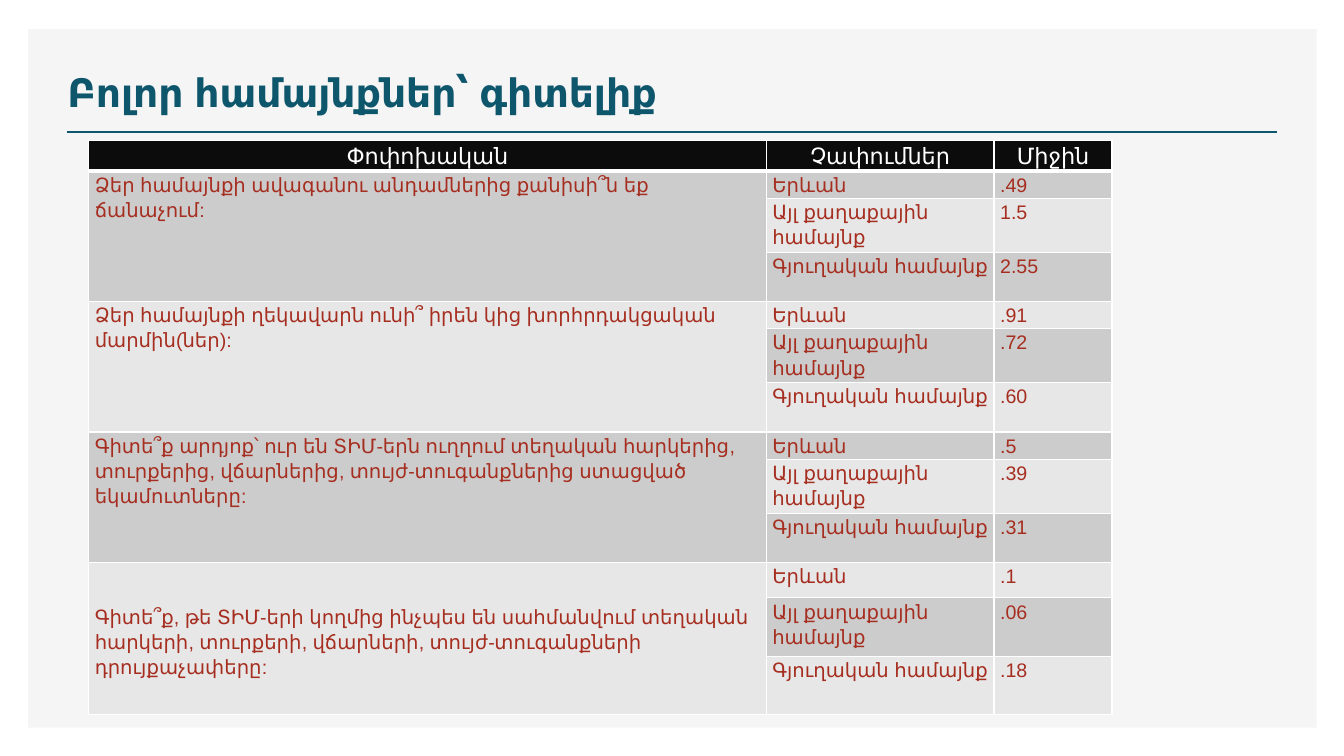
from dataclasses import dataclass

from lxml.etree import SubElement
from pptx import Presentation
from pptx.dml.color import RGBColor
from pptx.enum.shapes import MSO_CONNECTOR, MSO_SHAPE
from pptx.enum.text import MSO_ANCHOR, PP_ALIGN
from pptx.oxml.ns import qn
from pptx.slide import Slide
from pptx.table import Table, _Cell
from pptx.text.text import TextFrame
from pptx.util import Inches, Pt

WHITE = RGBColor(0xFF, 0xFF, 0xFF)
PANEL_GRAY = RGBColor(0xF5, 0xF5, 0xF5)
TEAL = RGBColor(0x0E, 0x56, 0x6C)
BLACK = RGBColor(0x0C, 0x0C, 0x0C)
RED = RGBColor(0xA6, 0x2E, 0x20)
BANDS = (RGBColor(0xCC, 0xCC, 0xCC), RGBColor(0xE7, 0xE7, 0xE7))

HEADERS = ("Փոփոխական", "Չափումներ", "Միջին")
COMMUNITIES = ("Երևան", "Այլ քաղաքային համայնք", "Գյուղական համայնք")
COLUMN_WIDTHS = (6.72, 2.26, 1.17)
HEADER_HEIGHT = 0.26


@dataclass
class Question:
    text: str
    means: tuple[str, str, str]
    row_heights: tuple[float, float, float] = (0.26, 0.49, 0.49)
    top_margin: float = 0


QUESTIONS = (
    Question("Ձեր համայնքի ավագանու անդամներից քանիսի՞ն եք ճանաչում:",
             (".49", "1.5", "2.55")),
    Question("Ձեր համայնքի ղեկավարն ունի՞ իրեն կից խորհրդակցական մարմին(ներ):",
             (".91", ".72", ".60")),
    Question("Գիտե՞ք արդյոք՝ ուր են ՏԻՄ-երն ուղղում տեղական հարկերից, "
             "տուրքերից, վճարներից, տույժ-տուգանքներից ստացված եկամուտները:",
             (".5", ".39", ".31")),
    Question("Գիտե՞ք, թե ՏԻՄ-երի կողմից ինչպես են սահմանվում տեղական հարկերի, "
             "տուրքերի, վճարների, տույժ-տուգանքների դրույքաչափերը:",
             (".1", ".06", ".18"), (0.35, 0.58, 0.58), 0.4),
)


def write_text(frame: TextFrame, text: str, *, size: float, color: RGBColor,
               bold: bool = False, align: PP_ALIGN = PP_ALIGN.LEFT,
               line_spacing: float = 1, space_after: float = 0) -> None:
    paragraph = frame.paragraphs[0]
    paragraph.alignment = align
    paragraph.line_spacing = line_spacing
    paragraph.space_after = Pt(space_after)
    run = paragraph.add_run()
    run.text = text
    run.font.name = "Arial"
    run.font.size = Pt(size)
    run.font.bold = bold
    run.font.color.rgb = color


def style_cell(cell: _Cell, fill: RGBColor, bottom_width: float = 1) -> None:
    cell.margin_left = cell.margin_right = Inches(0.06)
    cell.margin_top = cell.margin_bottom = 0
    cell.vertical_anchor = MSO_ANCHOR.TOP
    properties = cell._tc.get_or_add_tcPr()
    for side, width in (("L", 1), ("R", 1), ("T", 1), ("B", bottom_width)):
        border = SubElement(properties, qn(f"a:ln{side}"), w=str(Pt(width)))
        border_fill = SubElement(border, qn("a:solidFill"))
        SubElement(border_fill, qn("a:srgbClr"), val=str(WHITE))
    cell.fill.solid()
    cell.fill.fore_color.rgb = fill


def write_cell(cell: _Cell, text: str, *, size: float = 14,
               color: RGBColor = RED, align: PP_ALIGN = PP_ALIGN.LEFT) -> None:
    write_text(cell.text_frame, text, size=size, color=color, align=align,
               line_spacing=1.15, space_after=10)


def add_question(table: Table, index: int, question: Question) -> None:
    first_row = 1 + index * len(COMMUNITIES)
    measures = zip(COMMUNITIES, question.means, question.row_heights)
    for row, (community, mean, height) in enumerate(measures, first_row):
        table.rows[row].height = Inches(height)
        style_cell(table.cell(row, 0), BANDS[index % 2])
        for column, text in ((1, community), (2, mean)):
            cell = table.cell(row, column)
            style_cell(cell, BANDS[(row - 1) % 2])
            write_cell(cell, text)
    question_cell = table.cell(first_row, 0)
    question_cell.merge(table.cell(first_row + len(COMMUNITIES) - 1, 0))
    question_cell.margin_top = Inches(question.top_margin)
    write_cell(question_cell, question.text)


def add_results_table(slide: Slide) -> None:
    row_count = 1 + len(QUESTIONS) * len(COMMUNITIES)
    height = HEADER_HEIGHT + sum(sum(q.row_heights) for q in QUESTIONS)
    table = slide.shapes.add_table(
        row_count, len(HEADERS), Inches(0.88), Inches(1.39),
        Inches(sum(COLUMN_WIDTHS)), Inches(height)).table
    table.horz_banding = False
    table.rows[0].height = Inches(HEADER_HEIGHT)
    for column, (header, width) in enumerate(zip(HEADERS, COLUMN_WIDTHS)):
        table.columns[column].width = Inches(width)
        cell = table.cell(0, column)
        style_cell(cell, BLACK, bottom_width=3)
        write_cell(cell, header, size=16, color=WHITE, align=PP_ALIGN.CENTER)
    for index, question in enumerate(QUESTIONS):
        add_question(table, index, question)


def add_frame(slide: Slide) -> None:
    # Background panel
    panel = slide.shapes.add_shape(MSO_SHAPE.RECTANGLE, Inches(0.28),
                                   Inches(0.29), Inches(12.78), Inches(6.93))
    panel.shadow.inherit = False
    panel.fill.solid()
    panel.fill.fore_color.rgb = PANEL_GRAY
    panel.line.fill.background()

    # Rule under the title
    rule = slide.shapes.add_connector(MSO_CONNECTOR.STRAIGHT, Inches(0.66),
                                      Inches(1.31), Inches(12.67), Inches(1.31))
    rule.line.color.rgb = TEAL
    rule.line.width = Pt(2)
    SubElement(rule._element.spPr, qn("a:effectLst"))

    # Title
    title = slide.shapes.add_textbox(Inches(0.57), Inches(0.49),
                                     Inches(7.52), Inches(0.7))
    title.text_frame.word_wrap = True
    title.text_frame.vertical_anchor = MSO_ANCHOR.BOTTOM
    write_text(title.text_frame, "Բոլոր համայնքներ՝ գիտելիք",
               size=28, color=TEAL, bold=True)


def main() -> None:
    presentation = Presentation()
    presentation.slide_width = Inches(13.33)
    presentation.slide_height = Inches(7.5)
    slide = presentation.slides.add_slide(presentation.slide_layouts[6])
    add_frame(slide)
    add_results_table(slide)
    presentation.save("out.pptx")


if __name__ == "__main__":
    main()
